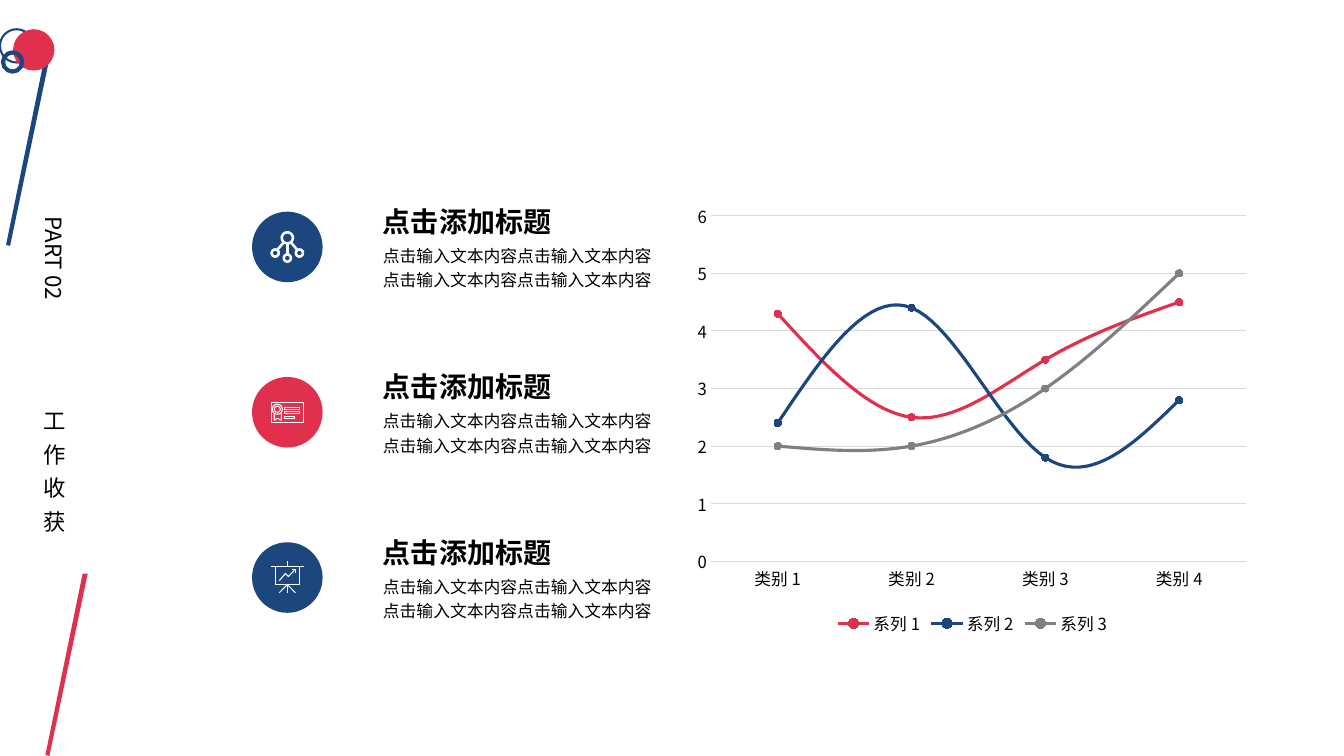
import math
from dataclasses import dataclass
from typing import NamedTuple

from lxml import etree
from pptx import Presentation
from pptx import util as u
from pptx.chart import data as chart_data
from pptx.dml import color
from pptx.enum import chart as chart_enum
from pptx.enum import shapes, text
from pptx.oxml import ns


@dataclass(frozen=True)
class Theme:
    navy: str = "1B477E"
    red: str = "E0304D"
    grey: str = "808080"
    grid: str = "D9D9D9"
    white: str = "FFFFFF"
    black: str = "000000"
    font: str = "Noto Sans CJK SC"
    title: float = 20
    side: float = 16
    body: float = 12
    axis: float = 11.9


class Item(NamedTuple):
    fill: str
    weight: float
    contours: list


class Series(NamedTuple):
    name: str
    values: list
    colour: str


class Box(NamedTuple):
    left: float
    top: float
    width: float
    height: float


def ring(x: float, y: float, size: float, sides: int = 32) -> list:
    """Closed circle as points around x, y."""
    turns = [2 * math.pi * step / sides for step in range(sides + 1)]
    return [(x + size / 2 * math.cos(turn), y + size / 2 * math.sin(turn)) for turn in turns]


def frame_points(x: float, y: float, width: float, height: float) -> list:
    """Closed rectangle with its middle at x, y."""
    corners = [(-1, -1), (1, -1), (1, 1), (-1, 1), (-1, -1)]
    return [(x + across * width / 2, y + down * height / 2) for across, down in corners]


THEME = Theme()
TITLE = "点击添加标题"
BODY = "点击输入文本内容" * 4
ITEM_TOP, ITEM_STEP = 1.98, 1.64
DISC_X, DISC_SIZE = 2.5, 0.7
CHART = Box(6.81, 1.93, 5.67, 4.42)
PLOT = Box(0.24, 0.21, 5.31, 3.43)

# Icon contours, measured from the middle of the disc
NETWORK = [
    ring(0, -0.09, 0.11),
    *[ring(x, y, 0.07) for x, y in [(-0.12, 0.06), (0, 0.11), (0.12, 0.06)]],
    [(0, -0.03), (0, 0.07)],
    *[[(0.04 * side, -0.04), (0.1 * side, 0.03)] for side in (-1, 1)],
]
CERTIFICATE = [
    frame_points(0, 0, 0.32, 0.2),
    ring(-0.1, -0.03, 0.1),
    ring(-0.1, -0.03, 0.06),
    [(-0.13, 0.01), (-0.13, 0.08), (-0.1, 0.06), (-0.06, 0.08), (-0.06, 0.01)],
    *[frame_points(x, y, width, 0.02)
      for x, y, width in [(0.05, -0.04, 0.15), (0.05, 0, 0.15), (0.02, 0.05, 0.1)]],
]
BOARD = [
    frame_points(0, -0.02, 0.24, 0.18),
    [(-0.16, -0.11), (0.16, -0.11)],
    [(0, -0.16), (0, -0.11)],
    *[[(0, 0.07), (x, 0.15)] for x in (-0.08, 0, 0.08)],
    [(-0.08, 0.03), (-0.02, -0.04), (0.01, -0.01), (0.07, -0.07)],
    [(0.05, -0.08), (0.08, -0.08), (0.08, -0.05)],
]
ITEMS = [
    Item(THEME.navy, 1.8, NETWORK),
    Item(THEME.red, 0.75, CERTIFICATE),
    Item(THEME.navy, 0.75, BOARD),
]
SERIES = [
    Series("系列 1", [4.3, 2.5, 3.5, 4.5], THEME.red),
    Series("系列 2", [2.4, 4.4, 1.8, 2.8], THEME.navy),
    Series("系列 3", [2, 2, 3, 5], THEME.grey),
]


def rgb(value: str) -> color.RGBColor:
    return color.RGBColor.from_string(value)


def inches(values: tuple) -> list:
    return [u.Inches(value) for value in values]


def paint(shape, fill: str = "", line: str = "", weight: float = 1) -> None:
    shape.shadow.inherit = False
    if fill:
        shape.fill.solid()
        shape.fill.fore_color.rgb = rgb(fill)
    else:
        shape.fill.background()
    if line:
        shape.line.color.rgb = rgb(line)
        shape.line.width = u.Pt(weight)
    else:
        shape.line.fill.background()


def add_circle(slide, left: float, top: float, size: float, **style) -> None:
    box = inches((left, top, size, size))
    paint(slide.shapes.add_shape(shapes.MSO_SHAPE.OVAL, *box), **style)


def add_outline(slide, contours: list, x: float, y: float, closed: bool, **style) -> None:
    """Draw all contours as one freeform, moved by x, y."""
    placed = [[inches((x + dx, y + dy)) for dx, dy in contour] for contour in contours]
    builder = slide.shapes.build_freeform(*placed[0][0])
    for index, contour in enumerate(placed):
        if index:
            builder.move_to(*contour[0])
        builder.add_line_segments(contour[1:], close=closed)
    paint(builder.convert_to_shape(), **style)


def set_font(font, size: float) -> None:
    font.size = u.Pt(size)
    font.name = THEME.font
    font.color.rgb = rgb(THEME.black)


def add_text(slide, box: Box, words: str, size: float, bold: bool = False,
             spacing: float = 1, vertical: bool = False, tracking: int = 0) -> None:
    frame = slide.shapes.add_textbox(*inches(box)).text_frame
    frame.word_wrap = True
    frame.auto_size = text.MSO_AUTO_SIZE.SHAPE_TO_FIT_TEXT
    paragraph = frame.paragraphs[0]
    paragraph.line_spacing = spacing
    if vertical:
        frame._txBody.bodyPr.set("vert", "eaVert")
        paragraph.alignment = text.PP_ALIGN.JUSTIFY
    run = paragraph.add_run()
    run.text = words
    set_font(run.font, size)
    run.font.bold = bold
    properties = run._r.get_or_add_rPr()
    etree.SubElement(properties, ns.qn("a:ea"), typeface=THEME.font)
    if tracking:
        properties.set("spc", str(tracking * 100))


def add_line_chart(slide) -> None:
    values = chart_data.CategoryChartData()
    values.categories = [f"类别 {number}" for number in range(1, 5)]
    for row in SERIES:
        values.add_series(row.name, row.values)
    chart = slide.shapes.add_chart(
        chart_enum.XL_CHART_TYPE.LINE_MARKERS, *inches(CHART), values).chart
    chart.has_title = False
    chart.has_legend = True
    chart.legend.position = chart_enum.XL_LEGEND_POSITION.BOTTOM
    chart.legend.include_in_layout = False
    chart.plots[0].vary_by_categories = False
    for series, row in zip(chart.plots[0].series, SERIES):
        series.smooth = True
        series.format.line.width = u.Pt(2.25)
        marker = series.marker
        marker.style, marker.size = chart_enum.XL_MARKER_STYLE.CIRCLE, 5
        marker.format.fill.solid()
        for part in (series.format.line.color, marker.format.fill.fore_color,
                     marker.format.line.color):
            part.rgb = rgb(row.colour)

    # Axes and fonts
    category, value = chart.category_axis, chart.value_axis
    value.minimum_scale, value.maximum_scale, value.major_unit = 0, 6, 1
    value.format.line.fill.background()
    for line in (category.format.line, value.major_gridlines.format.line):
        line.color.rgb = rgb(THEME.grid)
        line.width = u.Pt(0.75)
    for axis in (category, value):
        axis.major_tick_mark = chart_enum.XL_TICK_MARK.NONE
    for font in (chart.font, chart.legend.font, category.tick_labels.font, value.tick_labels.font):
        set_font(font, THEME.axis)
    for properties in chart.element.iter(ns.qn("a:defRPr")):
        etree.SubElement(properties, ns.qn("a:ea"), typeface=THEME.font)

    # Plot area as shares of the chart frame
    area = chart.element.find(".//" + ns.qn("c:plotArea"))
    for old in area.findall(ns.qn("c:layout")):
        area.remove(old)
    layout = etree.Element(ns.qn("c:layout"))
    area.insert(0, layout)
    manual = etree.SubElement(layout, ns.qn("c:manualLayout"))
    for tag, setting in [("layoutTarget", "inner"), ("xMode", "edge"), ("yMode", "edge"),
                         ("x", PLOT.left / CHART.width), ("y", PLOT.top / CHART.height),
                         ("w", PLOT.width / CHART.width), ("h", PLOT.height / CHART.height)]:
        etree.SubElement(manual, ns.qn(f"c:{tag}"), val=str(setting))


def main() -> None:
    presentation = Presentation()
    presentation.slide_width, presentation.slide_height = inches((13.33, 7.5))
    slide = presentation.slides.add_slide(presentation.slide_layouts[6])

    # Side decoration: slanted bars and circles
    bar = [(0.06, 2.43), (0.43, 0.63), (0.48, 0.63), (0.1, 2.44)]
    add_outline(slide, [bar], 0, 0, True, fill=THEME.navy)
    add_circle(slide, 0, 0.29, 0.33, line=THEME.navy, weight=1.5)
    add_circle(slide, 0.13, 0.29, 0.41, fill=THEME.red)
    add_circle(slide, 0.03, 0.52, 0.19, line=THEME.navy, weight=3)
    add_outline(slide, [bar], 0.39, 5.06, True, fill=THEME.red)

    # Vertical section name
    add_text(slide, Box(0.25, 3.97, 0.47, 1.66), "工作收获", THEME.side, vertical=True, tracking=8)
    add_text(slide, Box(0.25, 2.05, 0.47, 1.75), "PART 02", THEME.side, vertical=True)

    add_line_chart(slide)

    # Disc, icon, body and title of each item
    for index, item in enumerate(ITEMS):
        top = ITEM_TOP + index * ITEM_STEP
        disc_top = top + 0.12
        add_circle(slide, DISC_X, disc_top, DISC_SIZE, fill=item.fill)
        add_outline(slide, item.contours, DISC_X + DISC_SIZE / 2, disc_top + DISC_SIZE / 2,
                    False, line=THEME.white, weight=item.weight)
        add_text(slide, Box(3.7, top + 0.37, 2.97, 0.59), BODY, THEME.body, spacing=1.2)
        add_text(slide, Box(3.7, top, 2.24, 0.44), TITLE, THEME.title, bold=True)

    presentation.save("out.pptx")


if __name__ == "__main__":
    main()
